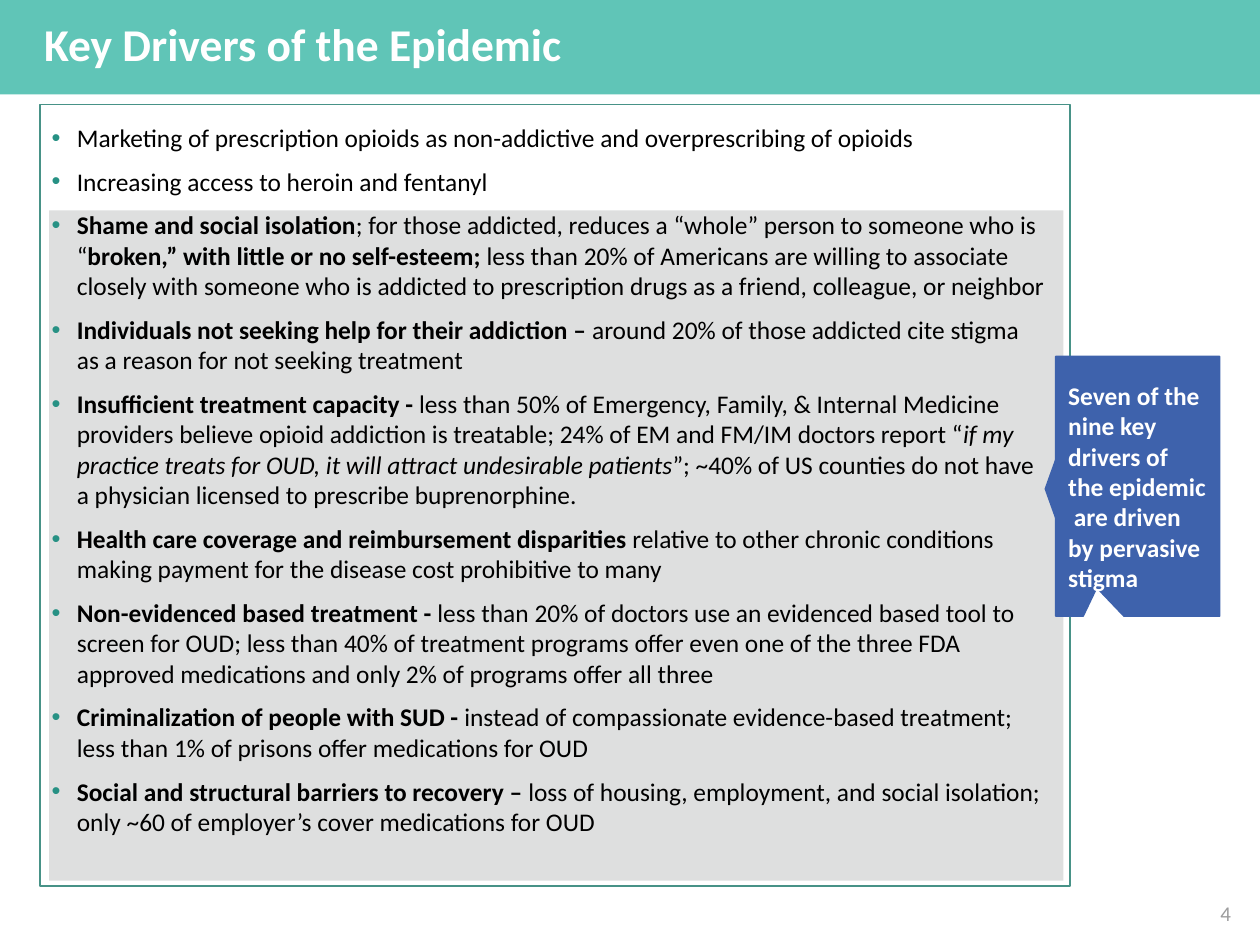
from lxml import etree
from pptx import Presentation
from pptx.dml.color import RGBColor
from pptx.enum.shapes import MSO_SHAPE
from pptx.enum.text import MSO_ANCHOR, MSO_AUTO_SIZE, PP_ALIGN
from pptx.oxml.ns import qn
from pptx.util import Inches, Pt

RECTANGLE = MSO_SHAPE.RECTANGLE
TRIANGLE = MSO_SHAPE.ISOSCELES_TRIANGLE
CALLOUT = MSO_SHAPE.RECTANGULAR_CALLOUT
TOP, MIDDLE = MSO_ANCHOR.TOP, MSO_ANCHOR.MIDDLE
LEFT, RIGHT = PP_ALIGN.LEFT, PP_ALIGN.RIGHT
NO_AUTOFIT = MSO_AUTO_SIZE.NONE

TEAL = RGBColor(0x60, 0xC5, 0xB7)
FRAME_GREEN = RGBColor(0x47, 0x92, 0x87)
BULLET_GREEN = RGBColor(0x27, 0x91, 0x84)
PANEL_GRAY = RGBColor(0xDE, 0xDF, 0xDF)
BLUE = RGBColor(0x3E, 0x62, 0xAC)
NUMBER_GRAY = RGBColor(0x9C, 0x9C, 0x9D)
BLACK = RGBColor(0, 0, 0)
WHITE = RGBColor(0xFF, 0xFF, 0xFF)

PLAIN, BOLD, ITALIC = {}, {"bold": True}, {"italic": True}

DRIVERS = [
    [("Marketing of prescription opioids as non-addictive and overprescribing of opioids", PLAIN)],
    [("Increasing access to heroin and fentanyl", PLAIN)],
    [
        ("Shame and social isolation", BOLD),
        ("; for those addicted, reduces a “whole” person to someone who is “", PLAIN),
        ("broken,” with little or no self-esteem; ", BOLD),
        ("less than 20% of Americans are willing to associate closely with someone who is "
         "addicted to prescription drugs as a friend, colleague, or neighbor", PLAIN),
    ],
    [
        ("Individuals not seeking help for their addiction – ", BOLD),
        ("around 20% of those addicted cite stigma as a reason for not seeking treatment", PLAIN),
    ],
    [
        ("Insufficient treatment capacity - ", BOLD),
        ("less than 50% of Emergency, Family, & Internal Medicine providers believe opioid "
         "addiction is treatable; 24% of EM and FM/IM doctors report “", PLAIN),
        ("if my practice treats for OUD, it will attract undesirable patients", ITALIC),
        ("”; ~40% of US counties do not have a physician licensed to prescribe buprenorphine.", PLAIN),
    ],
    [
        ("Health care coverage and reimbursement disparities ", BOLD),
        ("relative to other chronic conditions making payment for the disease cost "
         "prohibitive to many", PLAIN),
    ],
    [
        ("Non-evidenced based treatment - ", BOLD),
        ("less than 20% of doctors use an evidenced based tool to screen for OUD; less than 40% "
         "of treatment programs offer even one of the three FDA approved medications and only 2% "
         "of programs offer all three", PLAIN),
    ],
    [
        ("Criminalization of people with SUD - ", BOLD),
        ("instead of compassionate evidence-based treatment; less than 1% of prisons offer "
         "medications for OUD", PLAIN),
    ],
    [
        ("Social and structural barriers to recovery – ", BOLD),
        ("loss of housing, employment, and social isolation; only ~60 of employer’s cover "
         "medications for OUD", PLAIN),
    ],
]


class SlideBuilder:
    """Holds the text style and the current slide, and adds each kind of element."""

    font_name = "Calibri"
    body_size = 14.5

    def __init__(self, presentation):
        self.slide = presentation.slides.add_slide(presentation.slide_layouts[5])

    def place(self, shape, box):
        for side, length in zip(("left", "top", "width", "height"), box):
            setattr(shape, side, Inches(length))

    def frame(self, shape, anchor, insets=(0.1, 0.05)):
        across, down = (Inches(inset) for inset in insets)
        settings = {
            "word_wrap": True, "auto_size": NO_AUTOFIT, "vertical_anchor": anchor,
            "margin_left": across, "margin_right": across,
            "margin_top": down, "margin_bottom": down,
        }
        for name, value in settings.items():
            setattr(shape.text_frame, name, value)
        return shape.text_frame

    def add_runs(self, paragraph, runs, color, size=body_size, align=LEFT):
        paragraph.alignment = align
        for text, emphasis in runs:
            run = paragraph.add_run()
            run.text = text
            settings = {"name": self.font_name, "size": Pt(size),
                        "bold": False, "italic": False, **emphasis}
            for name, value in settings.items():
                setattr(run.font, name, value)
            run.font.color.rgb = color

    def indent(self, paragraph, margin, first_line):
        properties = paragraph._p.get_or_add_pPr()
        properties.set("marL", str(Inches(margin)))
        properties.set("indent", str(Inches(first_line)))
        return properties

    def title(self, text, box):
        title = self.slide.shapes.title
        self.place(title, box)
        title.fill.solid()
        title.fill.fore_color.rgb = TEAL
        heading = self.frame(title, MIDDLE).paragraphs[0]
        heading.line_spacing = 0.9
        self.indent(heading, 0.25, 0)
        self.add_runs(heading, [(text, BOLD)], WHITE, 26)

    def shape(self, kind, box, fill=None, line=None, rotation=0):
        shape = self.slide.shapes.add_shape(kind, *map(Inches, box))
        shape.shadow.inherit = False
        shape.rotation = rotation
        if fill is None:
            shape.fill.background()
        else:
            shape.fill.solid()
            shape.fill.fore_color.rgb = fill
        if line is None:
            shape.line.fill.background()
        else:
            shape.line.color.rgb = line
            shape.line.width = Pt(1)
        return shape

    def callout(self, text, box, tip):
        callout = self.shape(CALLOUT, box, BLUE, BLUE)
        callout.adjustments[0], callout.adjustments[1] = tip
        message = self.frame(callout, MIDDLE).paragraphs[0]
        self.add_runs(message, [(text, BOLD)], WHITE)

    def bullets(self, items, box):
        listing = self.slide.shapes.add_textbox(*map(Inches, box))
        text_frame = self.frame(listing, TOP, (0, 0))
        for index, runs in enumerate(items):
            paragraph = text_frame.add_paragraph() if index else text_frame.paragraphs[0]
            paragraph.space_before = Pt(7.5)
            properties = self.indent(paragraph, 0.2, -0.2)
            bullet_color = etree.SubElement(properties, qn("a:buClr"))
            etree.SubElement(bullet_color, qn("a:srgbClr"), val=str(BULLET_GREEN))
            etree.SubElement(properties, qn("a:buFont"), typeface="Arial")
            etree.SubElement(properties, qn("a:buChar"), char="•")
            self.add_runs(paragraph, runs, BLACK)

    def page_number(self, number, box):
        label = self.slide.shapes.add_textbox(*map(Inches, box))
        paragraph = self.frame(label, MIDDLE, (0.07, 0.04)).paragraphs[0]
        self.add_runs(paragraph, [(number, PLAIN)], NUMBER_GRAY, 12, RIGHT)


def main():
    presentation = Presentation()
    presentation.slide_width, presentation.slide_height = Inches(10), Inches(7.5)
    builder = SlideBuilder(presentation)
    builder.title("Key Drivers of the Epidemic", (0, 0, 10, 0.75))
    builder.shape(RECTANGLE, (0.39, 1.67, 8.05, 5.32), fill=PANEL_GRAY)
    builder.bullets(DRIVERS, (0.41, 0.97, 7.89, 5.91))
    builder.shape(RECTANGLE, (0.32, 0.83, 8.17, 6.2), line=FRAME_GREEN)
    builder.shape(TRIANGLE, (7.74, 3.76, 1.34, 0.24), fill=BLUE, rotation=270)
    builder.callout("Seven of the nine key drivers of the epidemic  are driven by pervasive stigma",
                    (8.38, 2.83, 1.3, 2.06), (-0.25, 0.39))
    builder.page_number("4", (7.59, 7.1, 2.25, 0.3))
    presentation.save("out.pptx")


if __name__ == "__main__":
    main()
